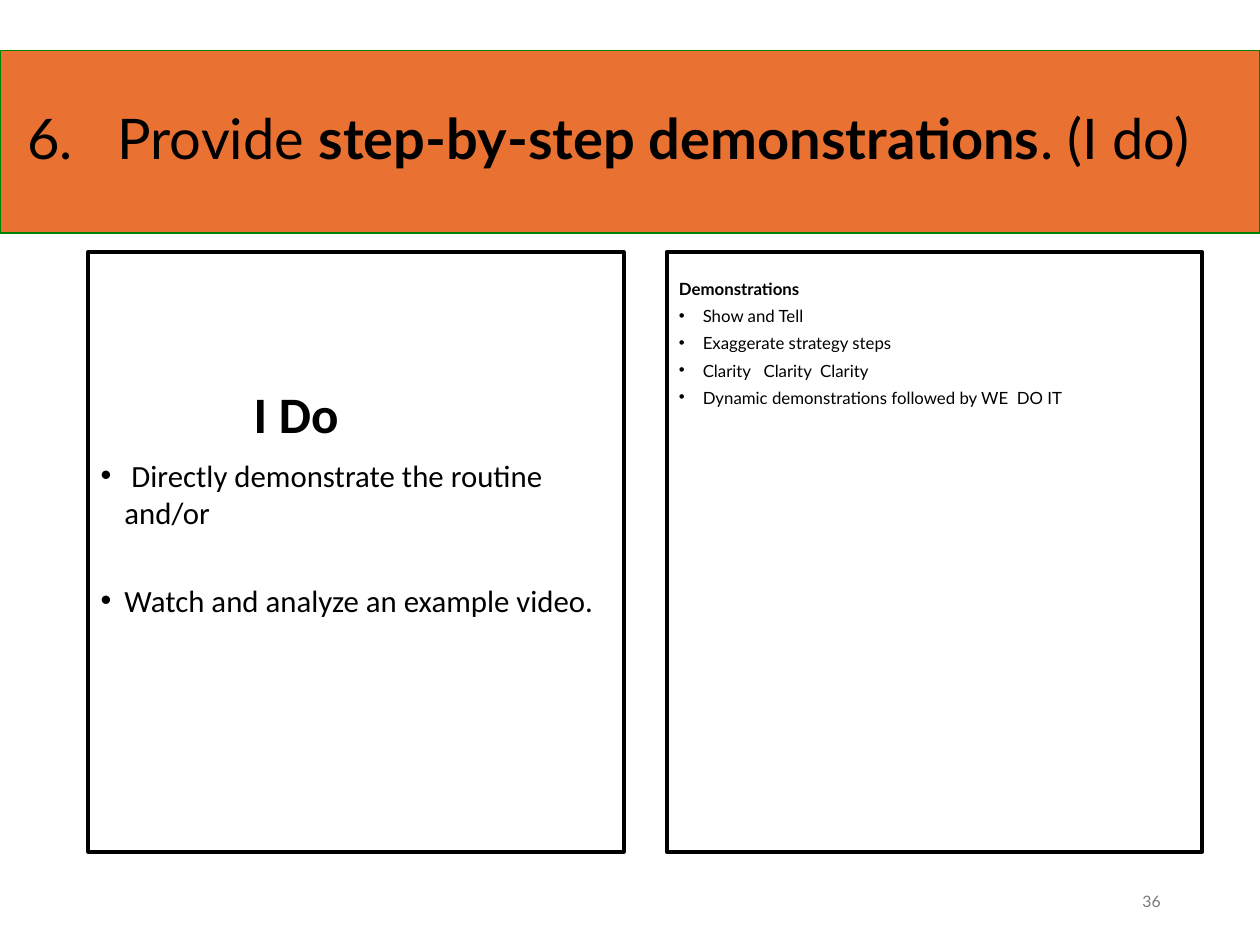
from lxml.etree import SubElement
from pptx import Presentation
from pptx.dml.color import RGBColor
from pptx.enum.shapes import MSO_SHAPE
from pptx.enum.text import MSO_ANCHOR, MSO_AUTO_SIZE, PP_ALIGN
from pptx.oxml.ns import qn
from pptx.util import Pt

PANEL_TOP, PANEL_WIDTH, PANEL_HEIGHT = 144, 306, 342.72
BULLET_INDENT = 13.6


def colour(hex_text):
    return RGBColor.from_string(hex_text)


def set_font(font, name, size, hex_text="000000", bold=False):
    font.name, font.size, font.bold = name, Pt(size), bold
    font.color.rgb = colour(hex_text)


def set_indent(para, left, first=0):
    properties = para._p.get_or_add_pPr()
    properties.set("marL", str(Pt(left)))
    properties.set("indent", str(Pt(first)))
    return properties


def add_title(page):
    title = page.shapes.title
    title.left, title.top, title.width, title.height = Pt(0), Pt(28.8), Pt(720), Pt(104.4)
    title.fill.solid()
    title.fill.fore_color.rgb = colour("E97132")
    title.line.color.rgb = colour("008000")
    title.line.width = Pt(0.75)
    frame = title.text_frame
    frame.auto_size = MSO_AUTO_SIZE.NONE
    frame.vertical_anchor = MSO_ANCHOR.MIDDLE
    frame.margin_left = Pt(15.6)
    para = frame.paragraphs[0]
    para.alignment = PP_ALIGN.LEFT
    para.line_spacing = 0.9
    set_indent(para, 51.6, -51.6)
    for text, bold in (("6.\tProvide ", False),
                       ("step-by-step demonstrations", True),
                       (". (I do)", False)):
        span = para.add_run()
        span.text = text
        set_font(span.font, "Lato", 32, bold=bold)


def add_panel(page, left, top_margin):
    """Add an outlined box and return its text frame."""
    box = page.shapes.add_shape(MSO_SHAPE.RECTANGLE, Pt(left), Pt(PANEL_TOP),
                                Pt(PANEL_WIDTH), Pt(PANEL_HEIGHT))
    box.shadow.inherit = False
    box.fill.background()
    box.line.color.rgb = colour("000000")
    box.line.width = Pt(2.25)
    frame = box.text_frame
    frame.word_wrap = True
    frame.vertical_anchor = MSO_ANCHOR.TOP
    frame.margin_top = Pt(top_margin)
    return frame


def add_heading(frame, text, name, size, indent=0, spacing=1.0):
    para = frame.paragraphs[0]
    para.text = text
    para.alignment = PP_ALIGN.LEFT
    para.line_spacing = spacing
    set_indent(para, indent)
    set_font(para.font, name, size, bold=True)


def add_bullet(frame, text, name, size, before=7.5, spacing=1.0):
    para = frame.add_paragraph()
    para.text = text
    para.alignment = PP_ALIGN.LEFT
    para.line_spacing = spacing
    para.space_before = Pt(before)
    set_font(para.font, name, size)
    properties = set_indent(para, BULLET_INDENT, -BULLET_INDENT)
    bullet_font = SubElement(properties, qn("a:buFont"), typeface="Arial")
    bullet = SubElement(properties, qn("a:buChar"), char="•")
    properties.remove(bullet_font)
    properties.remove(bullet)
    run_defaults = properties.find(qn("a:defRPr"))
    run_defaults.addprevious(bullet_font)
    run_defaults.addprevious(bullet)


def add_page_number(page, number):
    box = page.shapes.add_textbox(Pt(508.32), Pt(500.4), Pt(162), Pt(28.8))
    frame = box.text_frame
    frame.word_wrap = True
    frame.vertical_anchor = MSO_ANCHOR.MIDDLE
    para = frame.paragraphs[0]
    para.text = number
    para.alignment = PP_ALIGN.RIGHT
    set_font(para.font, "Lato", 9, "797979")


def main():
    deck = Presentation()
    deck.slide_width, deck.slide_height = Pt(720), Pt(540)
    page = deck.slides.add_slide(deck.slide_layouts[5])
    add_title(page)

    routine = add_panel(page, 50.4, 74.4)
    add_heading(routine, "I Do", "Calibri", 29.2, indent=87.5)
    add_bullet(routine, " Directly demonstrate the routine and/or", "Calibri", 17.6)
    add_bullet(routine, "Watch and analyze an example video.", "Calibri", 17.6, before=29)

    demonstrations = add_panel(page, 380.88, 18.3)
    add_heading(demonstrations, "Demonstrations", "Lato", 9.6, spacing=0.7)
    for text in ("Show and Tell", "Exaggerate strategy steps",
                 "Clarity   Clarity  Clarity",
                 "Dynamic demonstrations followed by WE  DO IT"):
        add_bullet(demonstrations, text, "Lato", 9.6, spacing=0.7)

    add_page_number(page, "36")
    deck.save("out.pptx")


if __name__ == "__main__":
    main()
